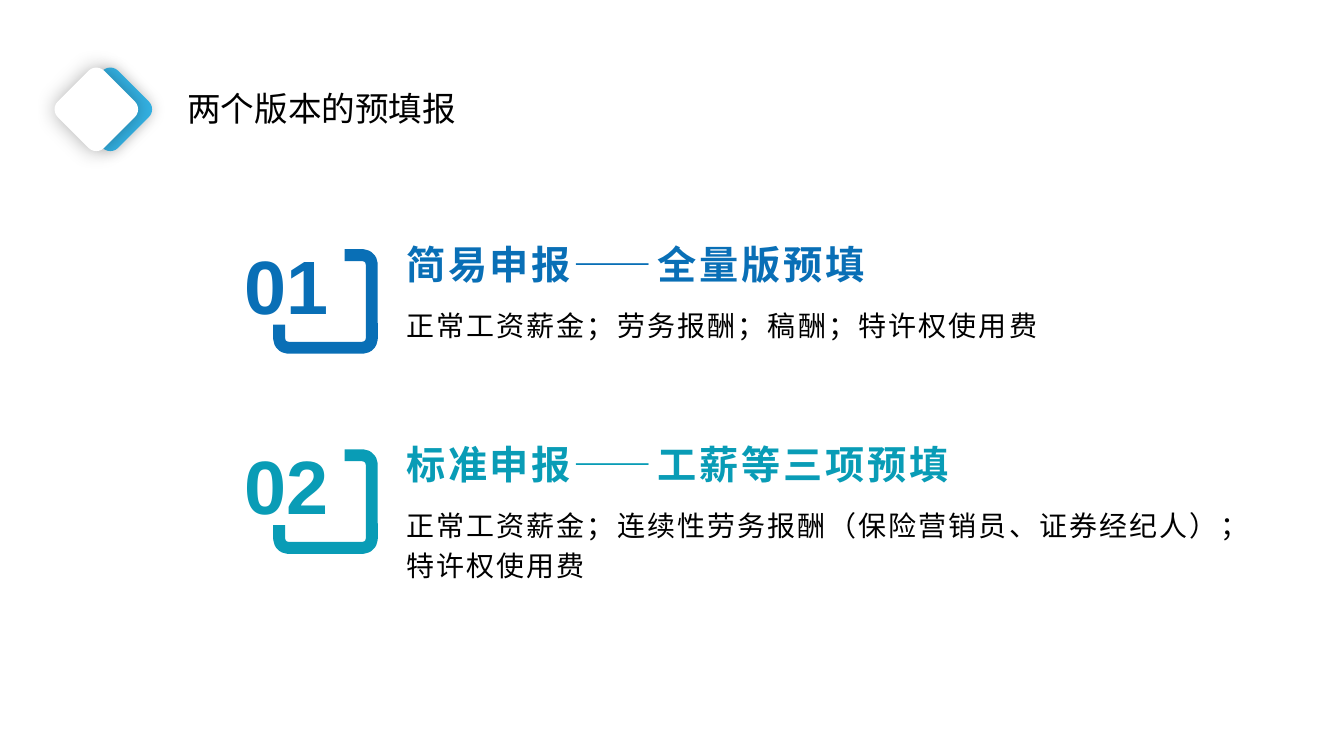
import pptx
import pptx.util
import pptx.dml.color
import pptx.enum.shapes
import pptx.enum.text
import pptx.oxml
import pptx.oxml.ns

Pt = pptx.util.Pt
SHAPE = pptx.enum.shapes.MSO_SHAPE
ALIGN = pptx.enum.text.PP_ALIGN
ANCHOR = pptx.enum.text.MSO_ANCHOR
COLORS = {"blue": "096FB6", "teal": "099CB6", "sky": "34B2E4",
          "white": "FFFFFF", "black": "000000"}
LATIN, HAN = "Arial", "Noto Sans CJK SC"
PITCH = 143
ITEMS = [
    ("01", "blue", "简易申报——全量版预填",
     "正常工资薪金；劳务报酬；稿酬；特许权使用费", 531.4),
    ("02", "teal", "标准申报——工薪等三项预填",
     "正常工资薪金；连续性劳务报酬（保险营销员、证券经纪人）；特许权使用费", 604),
]


def color(name):
    return pptx.dml.color.RGBColor.from_string(COLORS[name])


def write(shape, text, size, tint, bold=False, lead=1.2, gap=0, face=LATIN):
    """Fill a shape with one paragraph; gap is the letter spacing in points."""
    shape.text_frame.word_wrap = True
    para = shape.text_frame.paragraphs[0]
    para.line_spacing = lead
    run = para.add_run()
    run.text = text
    font = run.font
    font.name, font.size, font.bold = face, Pt(size), bold
    font.color.rgb = color(tint)
    props = run._r.get_or_add_rPr()
    if gap:
        props.set("spc", str(int(gap * 100)))
    east = pptx.oxml.parse_xml(
        f'<a:ea {pptx.oxml.ns.nsdecls("a")} typeface="{HAN}"/>')
    props.find(pptx.oxml.ns.qn("a:latin")).addnext(east)
    return para


def label(slide, box, text, size, tint, anchor=ANCHOR.TOP, **style):
    shape = slide.shapes.add_textbox(*map(Pt, box))
    shape.text_frame.vertical_anchor = anchor
    write(shape, text, size, tint, **style)


def block(slide, kind, box, fill=None):
    shape = slide.shapes.add_shape(kind, *map(Pt, box))
    shape.shadow.inherit = False
    if fill:
        shape.fill.solid()
        shape.fill.fore_color.rgb = color(fill)
    else:
        shape.fill.background()
    shape.line.fill.background()
    return shape


def badge(slide, top, number, tint):
    """Draw a rounded frame with its corner masked by the number."""
    frame = block(slide, SHAPE.ROUNDED_RECTANGLE, (199.4, top + 21.6, 66.2, 66.2))
    frame.adjustments[0] = 0.097
    frame.line.color.rgb = color(tint)
    frame.line.width = Pt(8.5)
    mask = block(slide, SHAPE.RECTANGLE, (163.4, top, 82.8, 71.3), "white")
    mask.text_frame.margin_top = mask.text_frame.margin_bottom = 0
    mask.text_frame.vertical_anchor = ANCHOR.MIDDLE
    write(mask, number, 54, tint, bold=True).alignment = ALIGN.CENTER


def diamond(slide, left, fill, alpha, blur):
    shape = block(slide, SHAPE.ROUNDED_RECTANGLE, (left, 54.7, 46.8, 46.8), fill)
    shape.rotation = 45
    effects = shape._element.spPr.find(pptx.oxml.ns.qn("a:effectLst"))
    effects.append(pptx.oxml.parse_xml(
        f'<a:outerShdw {pptx.oxml.ns.nsdecls("a")} blurRad="{Pt(blur)}" '
        f'dist="0" dir="0" algn="ctr" rotWithShape="0">'
        f'<a:srgbClr val="{COLORS["black"]}"><a:alpha val="{alpha * 1000}"/>'
        f'</a:srgbClr></a:outerShdw>'))


def item(slide, top, number, tint, head, body, width):
    badge(slide, top, number, tint)
    label(slide, (283, top + 51.2, width, 61), body, 20, "black", gap=1.5)
    label(slide, (283, top + 3.6, 435.6, 44.6), head, 28, tint,
          anchor=ANCHOR.MIDDLE, bold=True, lead=1.1, gap=2)


def main():
    deck = pptx.Presentation()
    deck.slide_width, deck.slide_height = Pt(960), Pt(540)
    slide = deck.slides.add_slide(deck.slide_layouts[6])
    for row, entry in enumerate(ITEMS):
        item(slide, 160.6 + row * PITCH, *entry)
    diamond(slide, 55.4, "sky", 20, 10)
    diamond(slide, 45.4, "white", 30, 15)
    label(slide, (126.7, 44.6, 227.5, 50.4), "两个版本的预填报", 24, "black",
          lead=1.5, face=HAN)
    deck.save("out.pptx")


if __name__ == "__main__":
    main()
